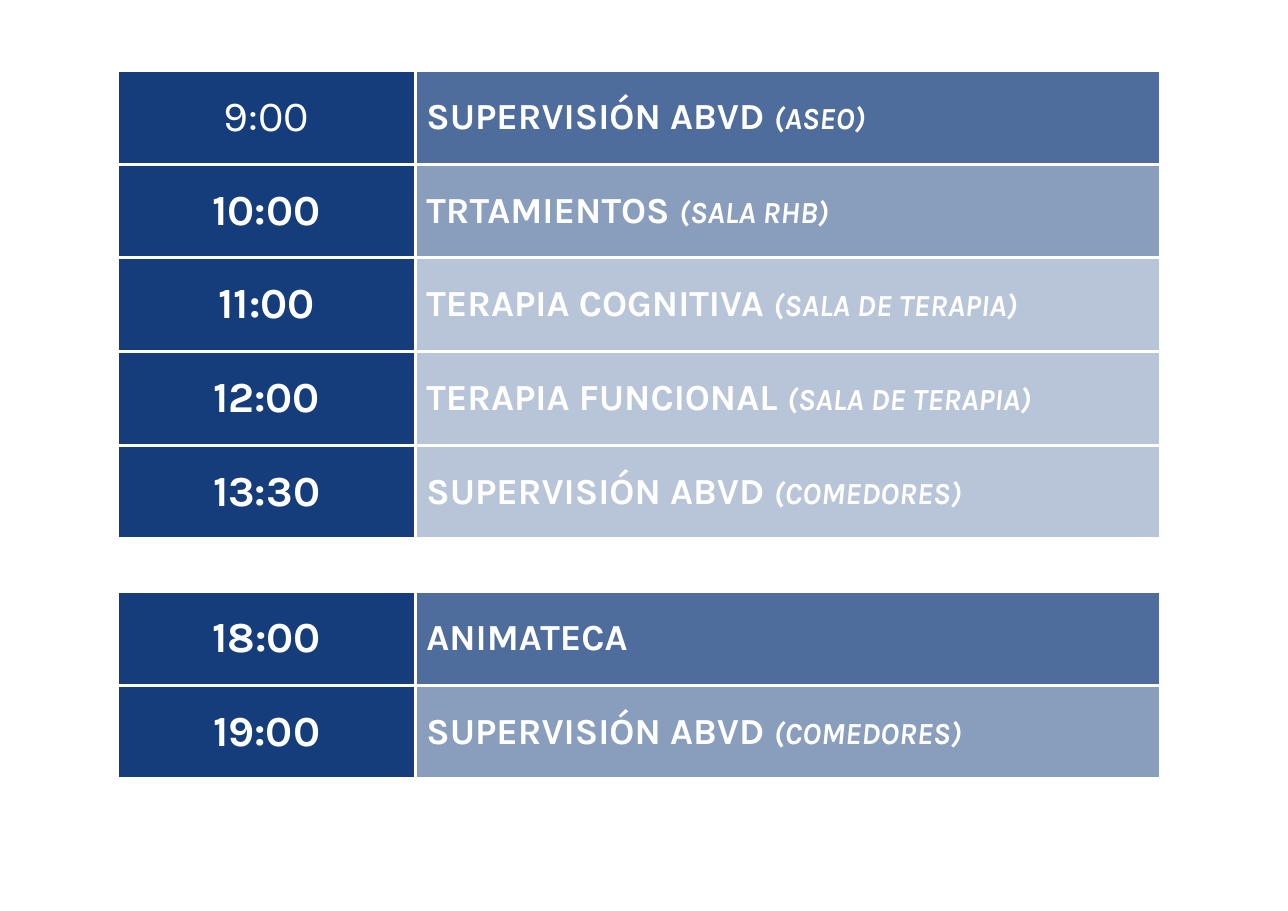
from lxml import etree
from pptx import Presentation
from pptx.dml.color import RGBColor
from pptx.enum.text import MSO_ANCHOR, PP_ALIGN
from pptx.oxml.ns import qn
from pptx.util import Pt

MIDDLE = MSO_ANCHOR.MIDDLE
CENTER, LEFT = PP_ALIGN.CENTER, PP_ALIGN.LEFT

NAVY, WHITE = "153D7C", "FFFFFF"
SCHEDULE = [
    ("9:00", "SUPERVISIÓN ABVD ", "(ASEO)", 75),
    ("10:00", "TRTAMIENTOS ", "(SALA RHB)", 50),
    ("11:00", "TERAPIA COGNITIVA ", "(SALA DE TERAPIA)", 30),
    ("12:00", "TERAPIA FUNCIONAL ", "(SALA DE TERAPIA)", 30),
    ("13:30", "SUPERVISIÓN ABVD ", "(COMEDORES)", 30),
    None,
    ("18:00", "ANIMATECA", "", 75),
    ("19:00", "SUPERVISIÓN ABVD ", "(COMEDORES)", 50),
]
FIRST_HOUR = {"size": Pt(28), "bold": False}
HOUR = {"size": Pt(28), "bold": True}
ACTIVITY = {"size": Pt(24), "bold": True}
PLACE = {"size": Pt(20), "bold": True, "italic": True}

PAGE_WIDTH, PAGE_HEIGHT = 841.68, 595.44
LEFT_EDGE, TOP_EDGE = 77.04, 46.08
COLUMNS = [194.4, 486.72]
ROW_HEIGHT, BREAK_HEIGHT = 61.2, 34.56
BORDER = 2.25


def color(value):
    return RGBColor.from_string(value)


def add_borders(cell):
    properties = cell._tc.get_or_add_tcPr()
    for position, side in enumerate(("lnL", "lnR", "lnT", "lnB")):
        line = etree.Element(qn("a:" + side), w=str(Pt(BORDER)))
        fill = etree.SubElement(line, qn("a:solidFill"))
        etree.SubElement(fill, qn("a:srgbClr"), val=WHITE)
        properties.insert(position, line)


def fill_cell(cell, value, opacity=100):
    cell.fill.solid()
    cell.fill.fore_color.rgb = color(value)
    if opacity < 100:
        tint = cell._tc.tcPr.find(".//" + qn("a:srgbClr"))
        etree.SubElement(tint, qn("a:alpha"), val=str(opacity * 1000))
    add_borders(cell)


def write(cell, pieces, alignment):
    cell.vertical_anchor = MIDDLE
    paragraph = cell.text_frame.paragraphs[0]
    paragraph.alignment = alignment
    for words, style in pieces:
        if words:
            run = paragraph.add_run()
            run.text = words
            run.font.name = "Karla"
            run.font.color.rgb = color(WHITE)
            for name, value in style.items():
                setattr(run.font, name, value)


presentation = Presentation()
presentation.slide_width, presentation.slide_height = Pt(PAGE_WIDTH), Pt(PAGE_HEIGHT)
slide = presentation.slides.add_slide(presentation.slide_layouts[6])

heights = [ROW_HEIGHT if entry else BREAK_HEIGHT for entry in SCHEDULE]
timetable = slide.shapes.add_table(
    len(SCHEDULE), len(COLUMNS), Pt(LEFT_EDGE), Pt(TOP_EDGE),
    Pt(sum(COLUMNS)), Pt(sum(heights))).table
timetable.first_row = timetable.horz_banding = False
for column, width in zip(timetable.columns, COLUMNS):
    column.width = Pt(width)

for index, (entry, height) in enumerate(zip(SCHEDULE, heights)):
    row = timetable.rows[index]
    row.height = Pt(height)
    hour_cell, activity_cell = row.cells
    if entry is None:
        fill_cell(hour_cell, WHITE)
        fill_cell(activity_cell, WHITE)
        continue
    hour, activity, place, opacity = entry
    fill_cell(hour_cell, NAVY)
    fill_cell(activity_cell, NAVY, opacity)
    write(hour_cell, [(hour, HOUR if index else FIRST_HOUR)], CENTER)
    write(activity_cell, [(activity, ACTIVITY), (place, PLACE)], LEFT)

presentation.save("out.pptx")
